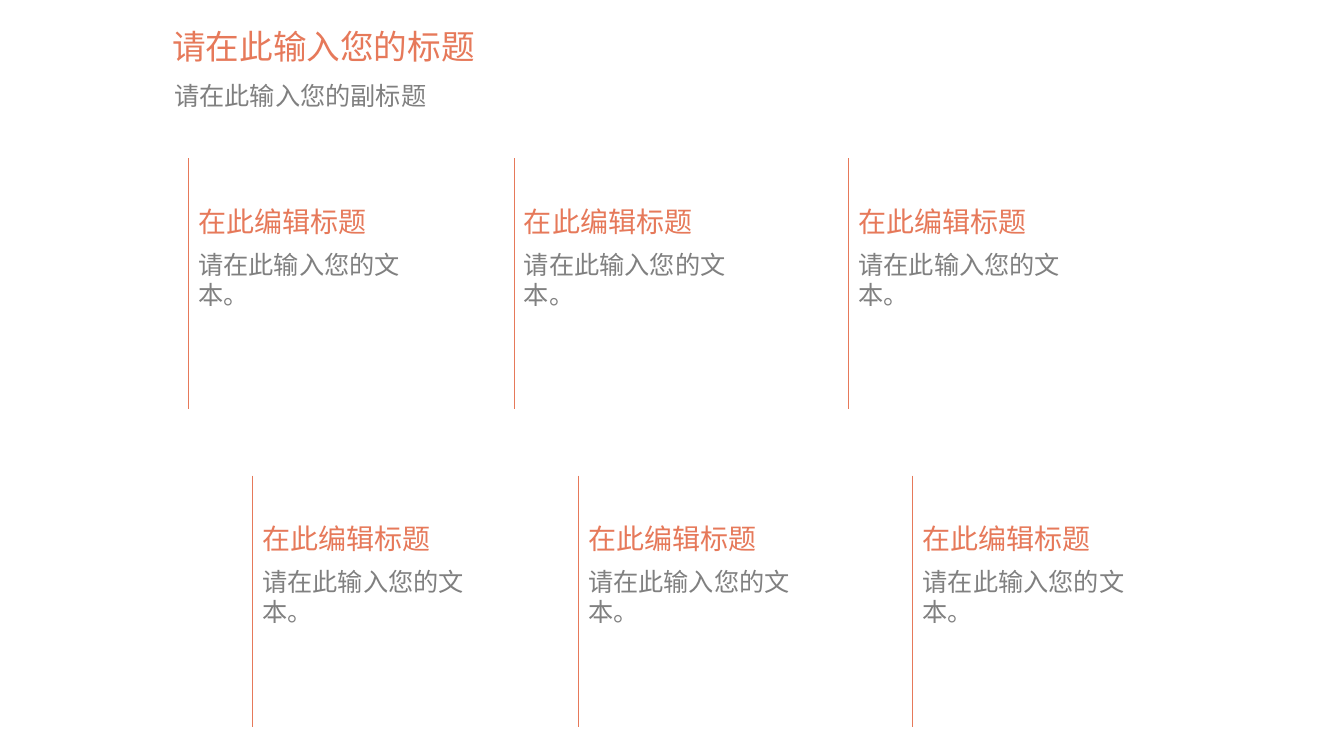
from dataclasses import dataclass

from lxml.etree import SubElement
from pptx import Presentation
from pptx.dml.color import RGBColor
from pptx.enum.shapes import MSO_CONNECTOR
from pptx.enum.text import MSO_ANCHOR
from pptx.oxml.ns import qn
from pptx.slide import Slide
from pptx.util import Pt

CORAL = RGBColor(0xE6, 0x79, 0x5A)
GRAY = RGBColor(0x80, 0x80, 0x80)
FONT = "Arial"

PAGE_WIDTH, PAGE_HEIGHT = 960, 540
COLUMN_LEFTS = (134.5, 367.2, 606.2)
ROW_TOPS = (113, 339.8)
ROW_INDENT = 45.8
RULE_LENGTH = 179.3
TEXT_WIDTH = 174.2
HEADING_OFFSET, HEADING_HEIGHT = 28.8, 32.4
BODY_HEIGHT = 142.6


@dataclass(frozen=True)
class Entry:
    left: float
    top: float
    heading: str = "在此编辑标题"
    body: str = "请在此输入您的文本。"


def add_text(page: Slide, text: str, *, left: float, top: float, width: float,
             height: float, size: float, color: RGBColor,
             anchor: MSO_ANCHOR = MSO_ANCHOR.TOP, line_spacing: float = 1.0) -> None:
    box = page.shapes.add_textbox(Pt(left), Pt(top), Pt(width), Pt(height))
    frame = box.text_frame
    frame.word_wrap = True
    frame.vertical_anchor = anchor
    para = frame.paragraphs[0]
    para.line_spacing = line_spacing
    span = para.add_run()
    span.text = text
    span.font.name = FONT
    span.font.size = Pt(size)
    span.font.color.rgb = color


def add_rule(page: Slide, left: float, top: float) -> None:
    rule = page.shapes.add_connector(
        MSO_CONNECTOR.STRAIGHT, Pt(left), Pt(top), Pt(left), Pt(top + RULE_LENGTH))
    rule.line.color.rgb = CORAL
    rule.line.width = Pt(0.75)
    SubElement(rule._element.spPr, qn("a:effectLst"))


def add_entry(page: Slide, entry: Entry) -> None:
    heading_top = entry.top + HEADING_OFFSET
    body_top = heading_top + HEADING_HEIGHT
    add_text(page, entry.heading, left=entry.left, top=heading_top, width=TEXT_WIDTH,
             height=HEADING_HEIGHT, size=20, color=CORAL, anchor=MSO_ANCHOR.MIDDLE)
    # The body ends at the page edge at the latest
    add_text(page, entry.body, left=entry.left, top=body_top, width=TEXT_WIDTH,
             height=min(BODY_HEIGHT, PAGE_HEIGHT - body_top), size=18, color=GRAY)
    add_rule(page, entry.left, entry.top)


def main() -> None:
    deck = Presentation()
    deck.slide_width, deck.slide_height = Pt(PAGE_WIDTH), Pt(PAGE_HEIGHT)
    page = deck.slides.add_slide(deck.slide_layouts[6])

    # Two staggered rows of entries
    for row, top in enumerate(ROW_TOPS):
        for left in COLUMN_LEFTS:
            add_entry(page, Entry(left + row * ROW_INDENT, top))

    # Title and subtitle
    add_text(page, "请在此输入您的标题", left=116, top=10, width=688, height=46,
             size=24, color=CORAL, anchor=MSO_ANCHOR.MIDDLE)
    add_text(page, "请在此输入您的副标题", left=117.4, top=56.2, width=687, height=39,
             size=18, color=GRAY, line_spacing=0.9)

    deck.save("out.pptx")


if __name__ == "__main__":
    main()
